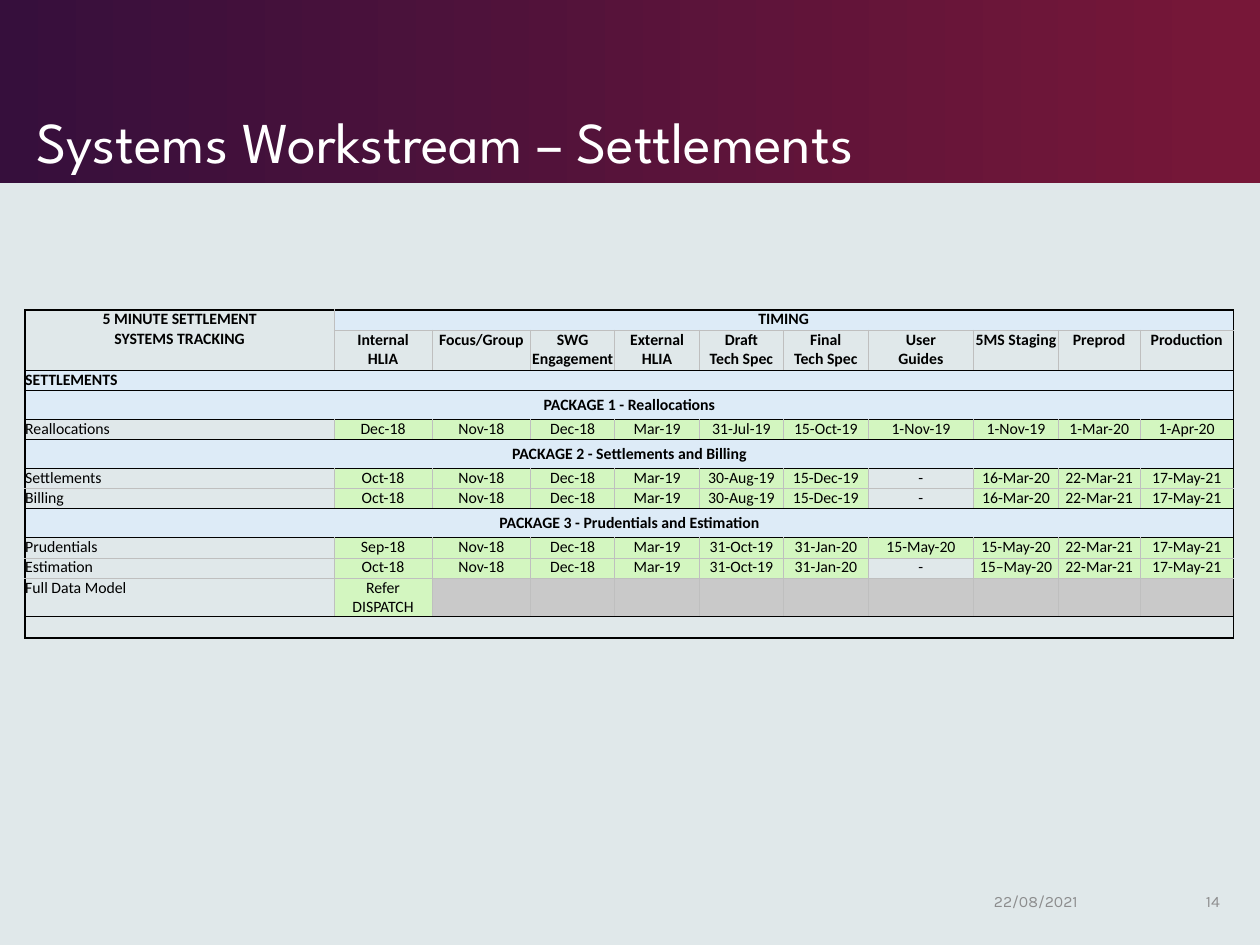
from lxml.etree import SubElement
from pptx import Presentation
from pptx.dml.color import RGBColor
from pptx.enum.shapes import MSO_SHAPE as Shape
from pptx.enum.text import MSO_ANCHOR as Anchor, PP_ALIGN as Align
from pptx.oxml.ns import qn
from pptx.util import Inches, Pt

COLORS = {
    "background": "E0E8EA", "banner_start": "360F3C", "banner_end": "771738",
    "title": "FFFFFF", "footer": "8D8D8E", "text": "000000",
    "band": "DDEBF7", "done": "D3F6C0", "unused": "C9C9C9",
    "frame": "000000", "grid": "BFBFBF",
}
NO_STYLE = "{2D5ABB26-0587-4C30-8999-92F81FD0307C}"

TITLE = "Systems Workstream – Settlements"
DATE, PAGE = "22/08/2021", "14"
CORNER = "5 MINUTE SETTLEMENT\vSYSTEMS TRACKING"
STAGES = ["Internal\vHLIA", "Focus/Group", "SWG\vEngagement", "External\vHLIA",
          "Draft\vTech Spec", "Final\vTech Spec", "User\vGuides",
          "5MS Staging", "Preprod", "Production"]
ROWS = [
    ("top", 0.16, [CORNER, "TIMING"]),
    ("stages", 0.32, [""] + STAGES),
    ("section", 0.16, ["SETTLEMENTS"]),
    ("package", 0.23, ["PACKAGE 1 - Reallocations"]),
    ("item", 0.16, ["Reallocations", "Dec-18", "Nov-18", "Dec-18", "Mar-19", "31-Jul-19",
                    "15-Oct-19", "1-Nov-19", "1-Nov-19", "1-Mar-20", "1-Apr-20"]),
    ("package", 0.23, ["PACKAGE 2 - Settlements and Billing"]),
    ("item", 0.16, ["Settlements", "Oct-18", "Nov-18", "Dec-18", "Mar-19", "30-Aug-19",
                    "15-Dec-19", "-", "16-Mar-20", "22-Mar-21", "17-May-21"]),
    ("item", 0.16, ["Billing", "Oct-18", "Nov-18", "Dec-18", "Mar-19", "30-Aug-19",
                    "15-Dec-19", "-", "16-Mar-20", "22-Mar-21", "17-May-21"]),
    ("package", 0.23, ["PACKAGE 3 - Prudentials and Estimation"]),
    ("item", 0.16, ["Prudentials", "Sep-18", "Nov-18", "Dec-18", "Mar-19", "31-Oct-19",
                    "31-Jan-20", "15-May-20", "15-May-20", "22-Mar-21", "17-May-21"]),
    ("item", 0.16, ["Estimation", "Oct-18", "Nov-18", "Dec-18", "Mar-19", "31-Oct-19",
                    "31-Jan-20", "-", "15–May-20", "22-Mar-21", "17-May-21"]),
    ("item", 0.30, ["Full Data Model", "Refer DISPATCH"] + [""] * 9),
    ("closing", 0.17, [""]),
]
COLUMN_WIDTHS = [2.45, 0.78, 0.78, 0.67, 0.67, 0.67, 0.67, 0.84, 0.67, 0.65, 0.74]
LAST_ROW, LAST_COLUMN = len(ROWS) - 1, len(COLUMN_WIDTHS) - 1
FULL_WIDTH = ("section", "package", "closing")


def rgb(name):
    return RGBColor.from_string(COLORS[name])


def style_runs(paragraph, size, font, color, bold=False):
    for run in paragraph.runs:
        run.font.size, run.font.name, run.font.bold = Pt(size), font, bold
        run.font.color.rgb = rgb(color)


def add_label(slide, box, text, size, font, color, anchor, align=Align.LEFT, spacing=1.0):
    frame = slide.shapes.add_textbox(*map(Inches, box)).text_frame
    frame.word_wrap = True
    frame.vertical_anchor = anchor
    frame.text = text
    paragraph = frame.paragraphs[0]
    paragraph.alignment, paragraph.line_spacing = align, spacing
    style_runs(paragraph, size, font, color)


def row_line(above):
    if above in (-1, LAST_ROW):
        return "frame", 1
    kinds = ROWS[above][0], ROWS[above + 1][0]
    inside_group = kinds in (("item", "item"), ("top", "stages"))
    return ("grid" if inside_group else "frame"), 0.5


def column_line(edge):
    return ("frame", 1) if edge in (0, LAST_COLUMN + 1) else ("grid", 0.5)


def draw_borders(cell, row, column):
    end_row, end_column = row + cell.span_height, column + cell.span_width
    borders = {"a:lnL": column_line(column), "a:lnR": column_line(end_column),
               "a:lnT": row_line(row - 1), "a:lnB": row_line(end_row - 1)}
    properties = cell._tc.get_or_add_tcPr()
    for tag, (color, width) in borders.items():
        line = SubElement(properties, qn(tag), w=str(Pt(width)))
        SubElement(SubElement(line, qn("a:solidFill")), qn("a:srgbClr"), val=COLORS[color])


def cell_fill(kind, column, text):
    if kind in ("section", "package") or (kind == "top" and column):
        return "band"
    if kind == "item" and column and text != "-":
        return "done" if text else "unused"
    return None


def fill_cell(cell, row, column, kind, text):
    draw_borders(cell, row, column)
    cell.margin_left = cell.margin_right = cell.margin_top = cell.margin_bottom = 0
    cell.vertical_anchor = Anchor.MIDDLE if kind == "package" else Anchor.TOP
    fill = cell_fill(kind, column, text)
    if fill:
        cell.fill.solid()
        cell.fill.fore_color.rgb = rgb(fill)
    else:
        cell.fill.background()
    cell.text_frame.text = text
    paragraph = cell.text_frame.paragraphs[0]
    left = kind == "section" or (kind == "item" and column == 0)
    paragraph.alignment = Align.LEFT if left else Align.CENTER
    style_runs(paragraph, 9, "Calibri", "text", bold=kind != "item")
    if not text:
        SubElement(paragraph._p, qn("a:endParaRPr"), sz="900")


def add_tracking_table(slide):
    heights = [height for _, height, _ in ROWS]
    table = slide.shapes.add_table(
        len(ROWS), len(COLUMN_WIDTHS), Inches(0.2), Inches(2.46),
        Inches(sum(COLUMN_WIDTHS)), Inches(sum(heights))).table
    table.first_row = table.horz_banding = False
    table._tbl.tblPr.find(qn("a:tableStyleId")).text = NO_STYLE
    for column, width in zip(table.columns, COLUMN_WIDTHS):
        column.width = Inches(width)
    for row, height in zip(table.rows, heights):
        row.height = Inches(height)

    table.cell(0, 0).merge(table.cell(1, 0))
    table.cell(0, 1).merge(table.cell(0, LAST_COLUMN))
    for row, (kind, _, texts) in enumerate(ROWS):
        if kind in FULL_WIDTH:
            table.cell(row, 0).merge(table.cell(row, LAST_COLUMN))
        for column, text in enumerate(texts):
            cell = table.cell(row, column)
            if not cell.is_spanned:
                fill_cell(cell, row, column, kind, text)


def main():
    deck = Presentation()
    deck.slide_width, deck.slide_height = Inches(10), Inches(7.5)
    slide = deck.slides.add_slide(deck.slide_layouts[6])
    slide.background.fill.solid()
    slide.background.fill.fore_color.rgb = rgb("background")

    banner = slide.shapes.add_shape(Shape.RECTANGLE, 0, 0, Inches(10), Inches(1.45))
    banner.shadow.inherit = False
    banner.line.fill.background()
    banner.fill.gradient()
    banner.fill.gradient_angle = 0
    stops = [("banner_start", 0), ("banner_end", 0.99)]
    for stop, (color, position) in zip(banner.fill.gradient_stops, stops):
        stop.color.rgb, stop.position = rgb(color), position

    add_tracking_table(slide)
    add_label(slide, (0.19, 0.15, 8.18, 1.3), TITLE, 33, "League Spartan", "title",
              Anchor.BOTTOM, spacing=0.9)
    add_label(slide, (9.31, 6.95, 0.47, 0.4), PAGE, 9, "Karla", "footer",
              Anchor.MIDDLE, Align.RIGHT)
    add_label(slide, (7.79, 6.95, 1.42, 0.4), DATE, 9, "Karla", "footer", Anchor.MIDDLE)
    deck.save("out.pptx")


if __name__ == "__main__":
    main()
